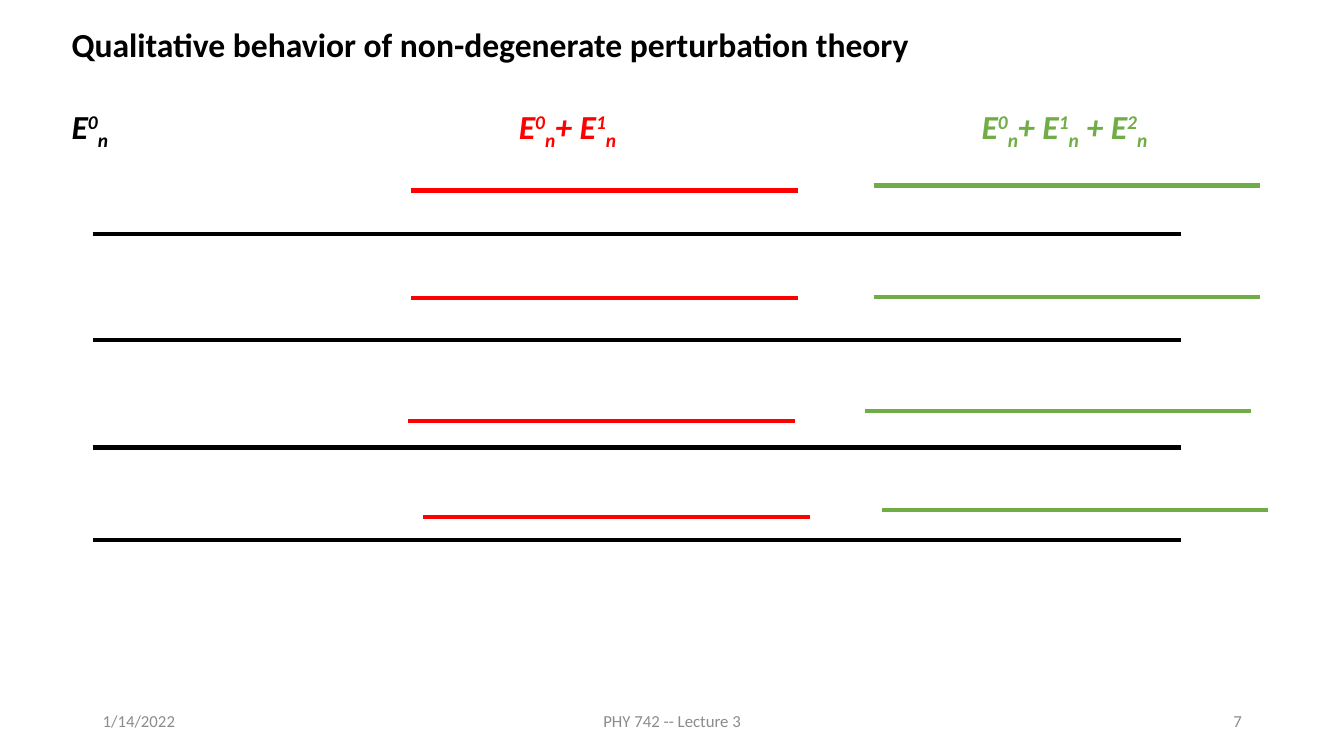
from pptx import Presentation
from pptx.util import Pt
from pptx.dml.color import RGBColor as Rgb
from pptx.enum.shapes import MSO_CONNECTOR as Link
from pptx.enum.text import MSO_ANCHOR as Anchor, PP_ALIGN as Align
from pptx.oxml.ns import qn
from lxml.etree import SubElement as Sub

HUES = {"black": "000000", "red": "FF0000", "green": "70AD47", "gray": "8C8C8C"}
FONT = "Calibri"
TABS = (319.5, 650)
SUMS = [
    ("black", [("E", "0")]),
    ("red", [("E", "0"), ("+ E", "1")]),
    ("green", [("E", "0"), ("+ E", "1"), (" + E", "2")]),
]
LEVELS = [
    ("black", 777.6, [(66.2, 167), (66.2, 242.6), (66.2, 319.7), (66.2, 385.9)]),
    ("red", 276, [(293.8, 136.1), (293.8, 213.1), (291.6, 301), (302.4, 369.4)]),
    ("green", 276, [(624.2, 132.5), (624.2, 212.4), (617.8, 293.8), (630, 364.3)]),
]
FOOT = [
    ("1/14/2022", 0, 216, Align.LEFT),
    ("PHY 742 -- Lecture 3", 252, 324, Align.CENTER),
    ("7", 612, 216, Align.RIGHT),
]


def hue(name):
    return Rgb.from_string(HUES[name])


def frame(slide, x, y, w, h):
    text = slide.shapes.add_textbox(Pt(x), Pt(y), Pt(w), Pt(h)).text_frame
    text.word_wrap = True
    return text


def style(para, size, color=None, bold=False):
    para.font.name = FONT
    para.font.size = Pt(size)
    para.font.bold = bold
    if color:
        para.font.color.rgb = hue(color)


def add_run(para, text, color, shift=0):
    run = para.add_run()
    run.text = text
    run.font.color.rgb = hue(color)
    if shift:
        run.font._element.set("baseline", str(shift * 1000))


def heading(slide, x, y, w, h):
    text = frame(slide, x, y, w, h)
    title = text.paragraphs[0]
    title.text = "Qualitative behavior of non-degenerate perturbation theory"
    style(title, 24, "black", True)

    sums = text.add_paragraph()
    sums.space_before = Pt(29.3)
    stops = Sub(sums._p.get_or_add_pPr(), qn("a:tabLst"))
    for stop in TABS:
        Sub(stops, qn("a:tab"), pos=str(Pt(stop)), algn="l")
    style(sums, 24, bold=True)
    sums.font.italic = True
    for i, (color, terms) in enumerate(SUMS):
        if i:
            add_run(sums, "\t", color)
        for base, order in terms:
            add_run(sums, base, color)
            add_run(sums, order, color, 30)
            add_run(sums, "n", color, -25)


def levels(slide, x, y):
    for color, width, starts in LEVELS:
        for left, top in starts:
            line = slide.shapes.add_connector(
                Link.STRAIGHT, Pt(x + left), Pt(y + top),
                Pt(x + left + width), Pt(y + top))
            line.line.color.rgb = hue(color)
            line.line.width = Pt(3)
            Sub(line._element.spPr, qn("a:effectLst"))


def footer(slide, x, y, h):
    for words, left, width, align in FOOT:
        text = frame(slide, x + left, y, width, h)
        text.vertical_anchor = Anchor.MIDDLE
        para = text.paragraphs[0]
        para.text = words
        para.alignment = align
        style(para, 12, "gray")


def main():
    deck = Presentation()
    deck.slide_width, deck.slide_height = Pt(960), Pt(540)
    slide = deck.slides.add_slide(deck.slide_layouts[6])
    footer(slide, 66.2, 500.5, 28.75)
    heading(slide, 44, 13.7, 877.7, 123.8)
    levels(slide, 0, 0)
    deck.save("out.pptx")


if __name__ == "__main__":
    main()
